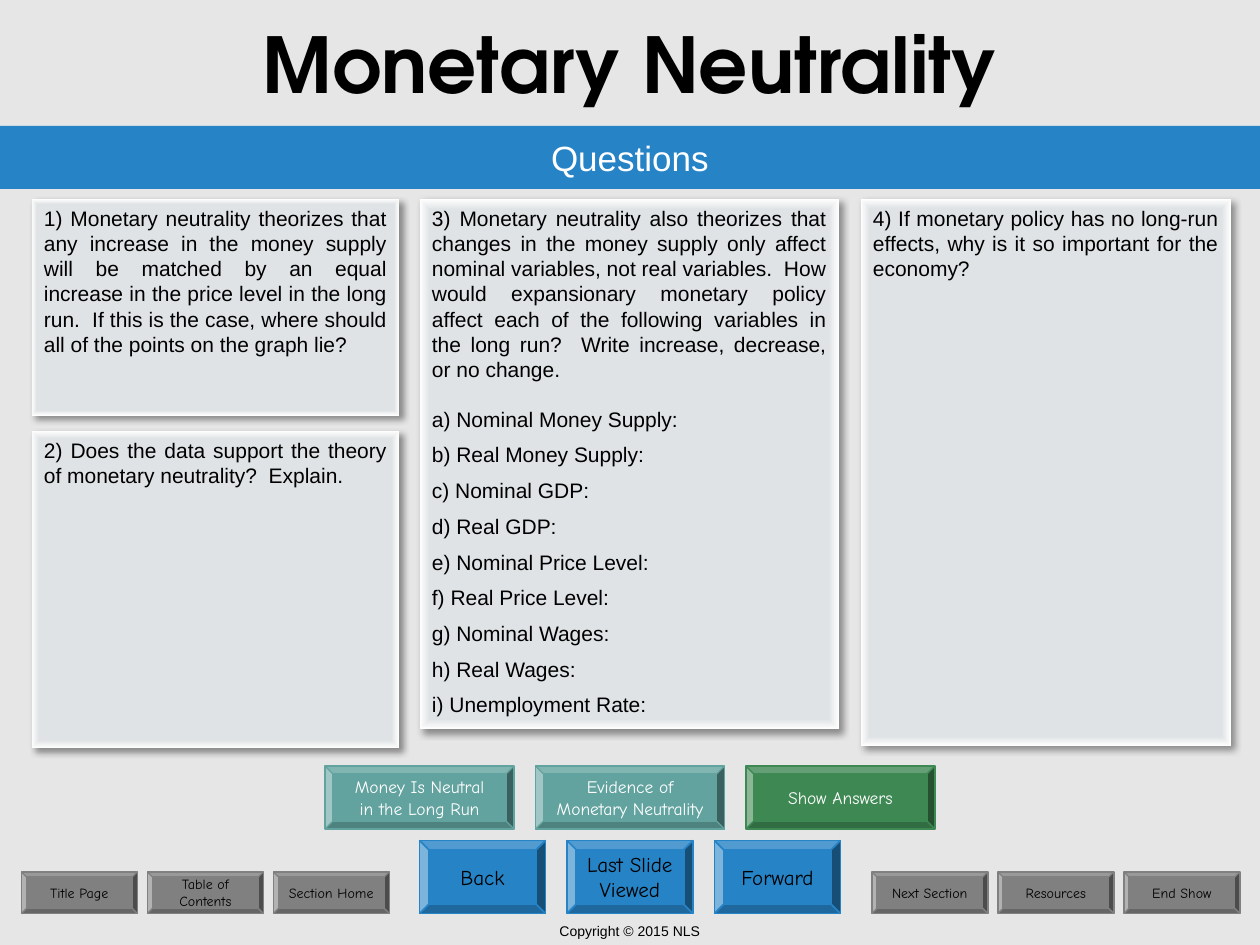
import lxml.etree
import pptx
import pptx.dml.color
import pptx.enum.shapes
import pptx.enum.text
import pptx.oxml.ns
import pptx.util

Inches = pptx.util.Inches
Pt = pptx.util.Pt
RGBColor = pptx.dml.color.RGBColor
Shapes = pptx.enum.shapes.MSO_SHAPE
Align = pptx.enum.text.PP_ALIGN
Anchor = pptx.enum.text.MSO_ANCHOR
qn = pptx.oxml.ns.qn

BACKGROUND = RGBColor(0xE6, 0xE6, 0xE6)
BLACK = RGBColor(0x00, 0x00, 0x00)
WHITE = RGBColor(0xFF, 0xFF, 0xFF)
BLUE = RGBColor(0x26, 0x83, 0xC6)
GRAY = RGBColor(0x80, 0x80, 0x80)
TEAL = RGBColor(0x62, 0xA3, 0x9F)
GREEN = RGBColor(0x3E, 0x88, 0x53)
CARD = RGBColor(0xDF, 0xE3, 0xE5)

BODY_FONT = "Arial"
BUTTON_FONT = "Comic Neue"
TITLE_FONT = "TeX Gyre Adventor"

VARIABLES = [
    "a) Nominal Money Supply:",
    "b) Real Money Supply:",
    "c) Nominal GDP:",
    "d) Real GDP:",
    "e) Nominal Price Level:",
    "f) Real Price Level:",
    "g) Nominal Wages:",
    "h) Real Wages:",
    "i) Unemployment Rate:",
]


def write_text(shape, text, size, font=BODY_FONT, color=BLACK, bold=False,
               align=Align.CENTER, anchor=Anchor.MIDDLE, wrap=True, gaps=()):
    frame = shape.text_frame
    frame.word_wrap = wrap
    frame.vertical_anchor = anchor
    frame.text = text
    for paragraph in frame.paragraphs:
        paragraph.alignment = align
        paragraph.font.size = Pt(size)
        paragraph.font.name = font
        paragraph.font.bold = bold
        paragraph.font.color.rgb = color
    for paragraph, gap in zip(frame.paragraphs, gaps):
        paragraph.space_after = Pt(gap)


class SlideBuilder:
    def __init__(self, slide):
        self.slide = slide
        slide.background.fill.solid()
        slide.background.fill.fore_color.rgb = BACKGROUND

    def shape(self, kind, left, top, width, height):
        shape = self.slide.shapes.add_shape(
            kind, Inches(left), Inches(top), Inches(width), Inches(height))
        shape.shadow.inherit = False
        return shape

    def label(self, text, left, top, width, height, **style):
        box = self.slide.shapes.add_textbox(
            Inches(left), Inches(top), Inches(width), Inches(height))
        write_text(box, text, **style)

    def band(self, text, top, height):
        shape = self.shape(Shapes.RECTANGLE, 0, top, 10, height)
        shape.fill.solid()
        shape.fill.fore_color.rgb = BLUE
        shape.line.fill.background()
        write_text(shape, text, size=20, color=WHITE)

    def card(self, text, left, top, width, height, gaps=()):
        shape = self.shape(Shapes.RECTANGLE, left, top, width, height)
        shape.line.fill.background()
        self.edge_glow(shape)
        self.drop_shadow(shape)
        write_text(shape, text, size=12, align=Align.JUSTIFY,
                   anchor=Anchor.TOP, gaps=gaps)

    def edge_glow(self, shape):
        shape.fill.gradient()
        stops = shape.fill.gradient_stops
        for stop, position, color in zip(stops, (0.95, 1), (CARD, WHITE)):
            stop.position = position
            stop.color.rgb = color
        gradient = shape.element.spPr.find(qn("a:gradFill"))
        linear = gradient.find(qn("a:lin"))
        center = lxml.etree.Element(qn("a:path"), path="shape")
        lxml.etree.SubElement(center, qn("a:fillToRect"),
                              l="50000", t="50000", r="50000", b="50000")
        gradient.replace(linear, center)

    def drop_shadow(self, shape):
        effects = shape.element.spPr.find(qn("a:effectLst"))
        shadow = lxml.etree.SubElement(
            effects, qn("a:outerShdw"), blurRad=str(Pt(4)), dist=str(Pt(3)),
            dir="2700000", algn="tl", rotWithShape="0")
        color = lxml.etree.SubElement(shadow, qn("a:srgbClr"), val=str(BLACK))
        lxml.etree.SubElement(color, qn("a:alpha"), val="40000")

    def button(self, text, left, top, width, height, fill, size,
               color=BLACK, border=0.75):
        shape = self.shape(Shapes.BEVEL, left, top, width, height)
        shape.fill.solid()
        shape.fill.fore_color.rgb = fill
        shape.line.color.rgb = fill
        shape.line.width = Pt(border)
        write_text(shape, text, size=size, font=BUTTON_FONT, color=color, wrap=False)

    def button_row(self, texts, left, top, width, height, step, **style):
        for index, text in enumerate(texts):
            self.button(text, left + index * step, top, width, height, **style)


def main():
    presentation = pptx.Presentation()
    presentation.slide_width = Inches(10)
    presentation.slide_height = Inches(7.5)
    builder = SlideBuilder(presentation.slides.add_slide(presentation.slide_layouts[6]))

    builder.label("Copyright © 2015 NLS", 0, 7.27, 10, 0.23, size=8, anchor=Anchor.TOP)
    builder.button_row(["Back", "Last Slide\nViewed", "Forward"],
                       3.33, 6.67, 1, 0.58, step=1.17, fill=BLUE, size=12, border=1)
    builder.button_row(["Title Page", "Table of\nContents", "Section Home"],
                       0.17, 6.92, 0.92, 0.33, step=1, fill=GRAY, size=8)
    builder.button_row(["Next Section", "Resources", "End Show"],
                       6.92, 6.92, 0.92, 0.33, step=1, fill=GRAY, size=8)

    builder.label("Monetary Neutrality", 0, 0, 10, 1, size=44, font=TITLE_FONT, bold=True)
    builder.band("Questions", 1, 0.5)

    builder.card(
        "1) Monetary neutrality theorizes that any increase in the money supply "
        "will be matched by an equal increase in the price level in the long run.  "
        "If this is the case, where should all of the points on the graph lie?",
        0.25, 1.58, 2.92, 1.72)
    builder.card(
        "2) Does the data support the theory of monetary neutrality?  Explain.",
        0.25, 3.42, 2.92, 2.52)
    effects_question = (
        "3) Monetary neutrality also theorizes that changes in the money supply "
        "only affect nominal variables, not real variables.  How would expansionary "
        "monetary policy affect each of the following variables in the long run?  "
        "Write increase, decrease, or no change.")
    builder.card("\n".join([effects_question] + VARIABLES), 3.33, 1.58, 3.33, 4.21,
                 gaps=[14] + [6] * len(VARIABLES))
    builder.card(
        "4) If monetary policy has no long-run effects, why is it so important "
        "for the economy?",
        6.83, 1.58, 2.94, 4.34)

    builder.button_row(["Money Is Neutral\nin the Long Run", "Evidence of\nMonetary Neutrality"],
                       2.58, 6.08, 1.5, 0.5, step=1.67, fill=TEAL, size=10, color=WHITE)
    builder.button("Show Answers", 5.92, 6.08, 1.5, 0.5, fill=GREEN, size=10, color=WHITE)

    presentation.save("out.pptx")


if __name__ == "__main__":
    main()
